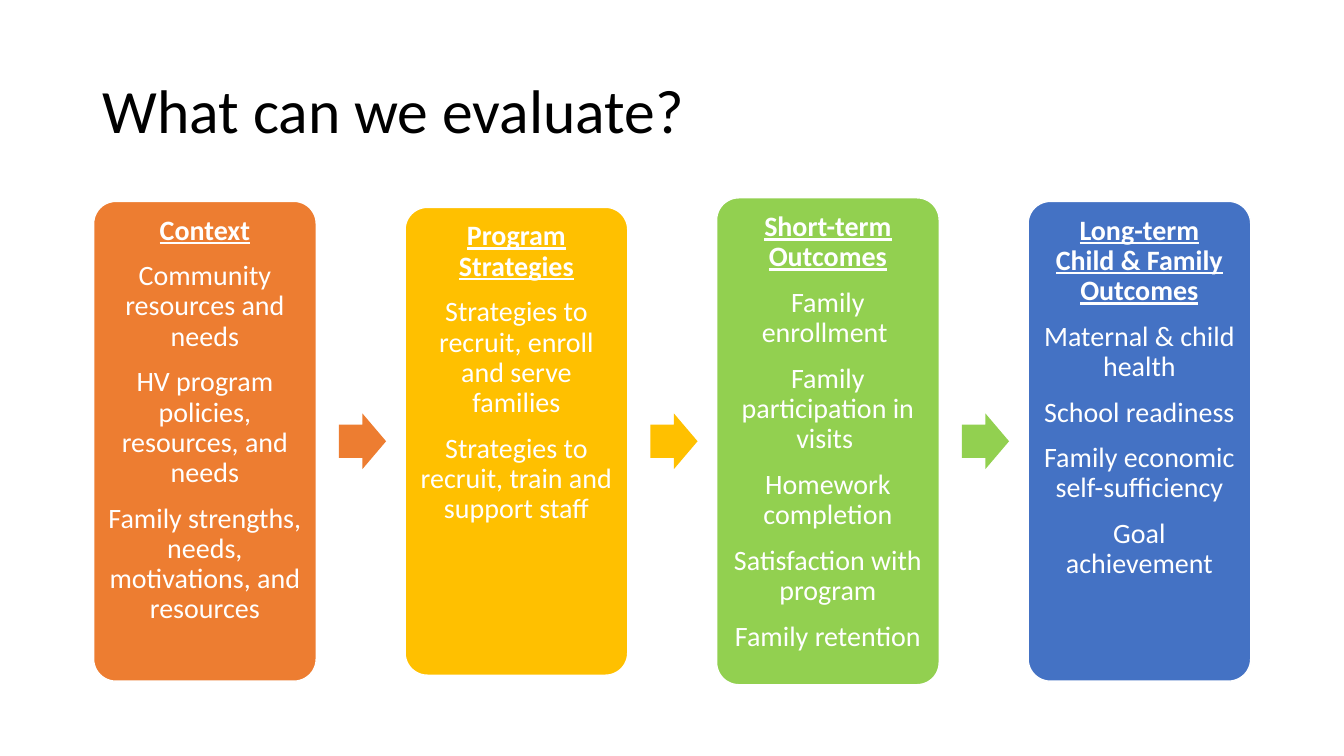
from dataclasses import dataclass

from pptx import Presentation
from pptx.dml.color import RGBColor
from pptx.enum.shapes import MSO_SHAPE
from pptx.enum.text import MSO_ANCHOR, MSO_AUTO_SIZE, PP_ALIGN
from pptx.util import Cm, Pt

COLORS = {
    "orange": "ED7D31",
    "gold": "FFC000",
    "green": "92D050",
    "blue": "4472C4",
    "white": "FFFFFF",
    "black": "000000",
}
FONT = "Calibri"
LEFT, PITCH, CENTER_Y = 2.36, 7.85, 11.12
CARD_W, ARROW_W, ARROW_H = 5.61, 1.19, 1.4
ARROW_OFFSET = 6.18


@dataclass
class Stage:
    heading: list[str]
    items: list[str]
    color: str
    height: float


STAGES = [
    Stage(
        ["Context"],
        [
            "Community resources and needs",
            "HV program policies, resources, and needs",
            "Family strengths, needs, motivations, and resources",
        ],
        "orange",
        12.09,
    ),
    Stage(
        ["Program Strategies"],
        [
            "Strategies to recruit, enroll and serve families",
            "Strategies to recruit, train and support staff",
        ],
        "gold",
        11.79,
    ),
    Stage(
        ["Short-term Outcomes"],
        [
            "Family enrollment ",
            "Family participation in visits ",
            "Homework completion",
            "Satisfaction with program",
            "Family retention",
        ],
        "green",
        12.27,
    ),
    Stage(
        ["Long-term", "Child & Family Outcomes"],
        [
            "Maternal & child health",
            "School readiness",
            "Family economic self-sufficiency",
            "Goal achievement",
        ],
        "blue",
        12.09,
    ),
]


def rgb(name: str) -> RGBColor:
    return RGBColor.from_string(COLORS[name])


def add_run(p, text: str, size: float, color: str, heading: bool = False) -> None:
    r = p.add_run()
    r.text = text
    r.font.name = FONT
    r.font.size = Pt(size)
    r.font.bold = heading
    r.font.underline = heading
    r.font.color.rgb = rgb(color)


def add_block(s, kind, x: float, w: float, h: float, color: str):
    sp = s.shapes.add_shape(kind, Cm(x), Cm(CENTER_Y - h / 2), Cm(w), Cm(h))
    sp.shadow.inherit = False
    sp.fill.solid()
    sp.fill.fore_color.rgb = rgb(color)
    sp.line.fill.background()
    return sp


def add_card(s, stage: Stage, x: float) -> None:
    sp = add_block(s, MSO_SHAPE.ROUNDED_RECTANGLE, x, CARD_W, stage.height, stage.color)
    sp.adjustments[0] = 0.1
    sp.line.color.rgb = rgb("white")
    sp.line.width = Pt(1)
    tf = sp.text_frame
    tf.word_wrap = True
    tf.vertical_anchor = MSO_ANCHOR.TOP
    tf.margin_left = tf.margin_right = tf.margin_top = tf.margin_bottom = Cm(0.2)
    p = tf.paragraphs[0]
    for i, line in enumerate(stage.heading):
        if i:
            p.add_line_break()
        add_run(p, line, 20, "white", heading=True)
    for item in stage.items:
        p = tf.add_paragraph()
        p.space_before = Pt(11)
        add_run(p, item, 20, "white")
    for p in tf.paragraphs:
        p.alignment = PP_ALIGN.CENTER
        p.line_spacing = 0.9


def add_arrow(s, color: str, x: float) -> None:
    sp = add_block(s, MSO_SHAPE.RIGHT_ARROW, x, ARROW_W, ARROW_H, color)
    sp.adjustments[0] = 0.6
    sp.adjustments[1] = 0.5


def add_title(s, text: str) -> None:
    sp = s.shapes.title
    sp.left, sp.top, sp.width, sp.height = Cm(2.33), Cm(1.01), Cm(29.21), Cm(3.68)
    tf = sp.text_frame
    tf.auto_size = MSO_AUTO_SIZE.NONE
    tf.vertical_anchor = MSO_ANCHOR.MIDDLE
    p = tf.paragraphs[0]
    p.alignment = PP_ALIGN.LEFT
    p.line_spacing = 0.9
    add_run(p, text, 44, "black")


def main() -> None:
    prs = Presentation()
    prs.slide_width, prs.slide_height = Cm(33.87), Cm(19.05)
    s = prs.slides.add_slide(prs.slide_layouts[5])
    add_title(s, "What can we evaluate?")
    for i, stage in enumerate(STAGES):
        x = LEFT + i * PITCH
        add_card(s, stage, x)
        if i < len(STAGES) - 1:
            add_arrow(s, stage.color, x + ARROW_OFFSET)
    prs.save("out.pptx")


if __name__ == "__main__":
    main()
